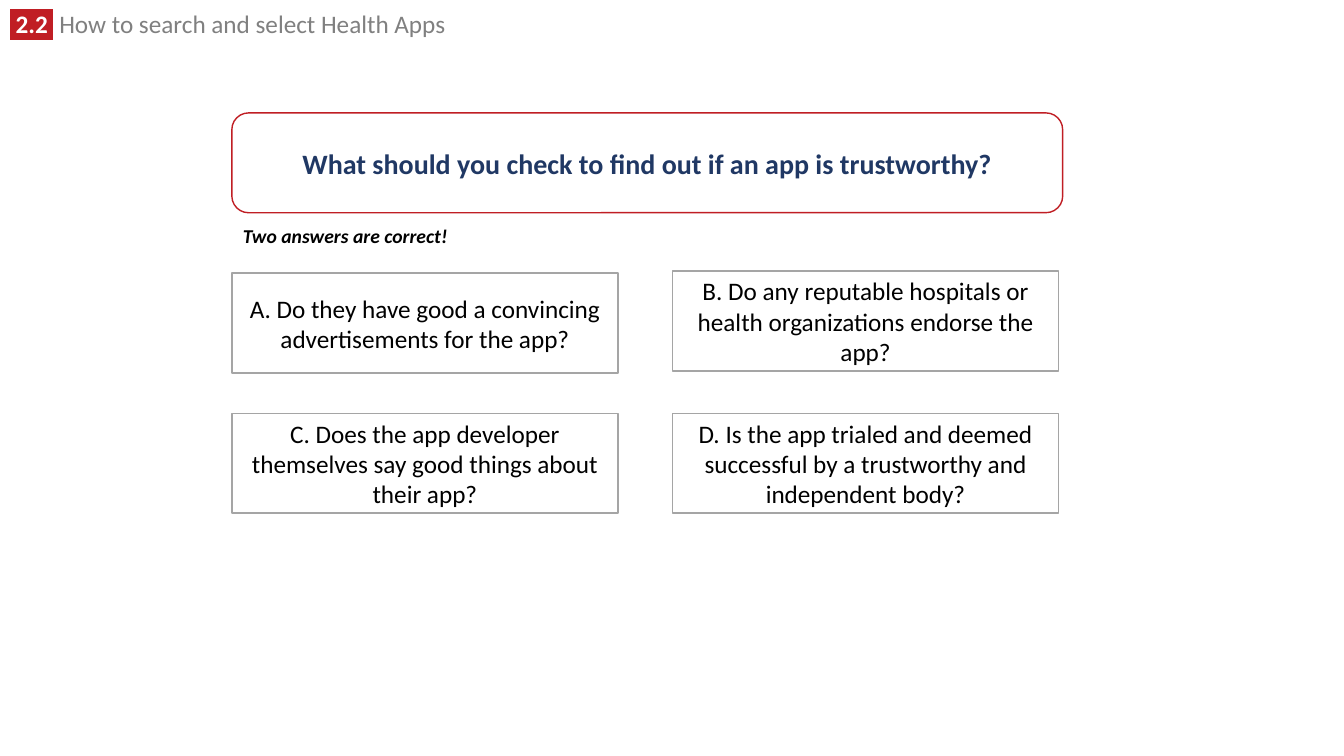
from dataclasses import dataclass

from lxml.etree import SubElement
from pptx import Presentation
from pptx.dml.color import RGBColor
from pptx.enum.shapes import MSO_SHAPE as Shape
from pptx.enum.text import MSO_ANCHOR as Anchor, MSO_AUTO_SIZE as AutoSize, PP_ALIGN as Align
from pptx.oxml.ns import qn
from pptx.util import Emu, Pt

PX = 9144  # 100 px to the inch


@dataclass(frozen=True)
class Theme:
    font: str = "Calibri"
    red: str = "C01E24"
    navy: str = "203864"
    gray: str = "808080"
    border: str = "A5A5A5"
    white: str = "FFFFFF"
    black: str = "000000"
    question_size: int = 20
    body_size: int = 18
    hint_size: int = 14


THEME = Theme()
ANSWER_LEFT = (230, 667)
ANSWER_WIDTH, BOX_HEIGHT = 383, 99
ANSWERS = (
    (0, 271, "A. Do they have good a convincing advertisements for the app?"),
    (1, 269, "B. Do any reputable hospitals or health organizations endorse the app?"),
    (0, 410, "C. Does the app developer themselves say good things about their app?"),
    (1, 410, "D. Is the app trialed and deemed successful by a trustworthy and independent body?"),
)


def color(value):
    return RGBColor.from_string(value)


def px(*lengths):
    return [Emu(length * PX) for length in lengths]


def set_font(para, size, ink, bold=False, italic=False):
    font = para.font
    font.name, font.size = THEME.font, Pt(size)
    font.bold, font.italic = bold, italic
    font.color.rgb = color(ink)


def add_label(page, area, wrap=True):
    """Add a text box that grows with its text and return its frame."""
    frame = page.shapes.add_textbox(*px(*area)).text_frame
    frame.word_wrap = wrap
    frame.auto_size = AutoSize.SHAPE_TO_FIT_TEXT
    return frame


def add_span(para, text, ink, bold, highlight=None):
    span = para.add_run()
    span.text = text
    span.font.bold = bold
    span.font.color.rgb = color(ink)
    if highlight:
        marker = SubElement(span.font._element, qn("a:highlight"))
        SubElement(marker, qn("a:srgbClr"), val=highlight)


def add_heading(page, number, title):
    para = add_label(page, (0, 9, 952, 35)).paragraphs[0]
    para.line_spacing = 0.8
    para.font.name, para.font.size = THEME.font, Pt(THEME.body_size)
    add_span(para, f" {number} ", THEME.white, True, THEME.red)
    add_span(para, f" {title}", THEME.gray, False)


def add_card(page, kind, area, text, line, size, ink, bold=False):
    box = page.shapes.add_shape(kind, *px(*area))
    box.shadow.inherit = False
    box.fill.solid()
    box.fill.fore_color.rgb = color(THEME.white)
    box.line.color.rgb = color(line)
    box.line.width = Pt(1)
    frame = box.text_frame
    frame.word_wrap = True
    frame.vertical_anchor = Anchor.MIDDLE
    para = frame.paragraphs[0]
    para.text = text
    para.alignment = Align.CENTER
    set_font(para, size, ink, bold)


def add_hint(page, text):
    para = add_label(page, (231, 217, 224, 34), wrap=False).paragraphs[0]
    para.text = text
    set_font(para, THEME.hint_size, THEME.black, bold=True, italic=True)


def main():
    deck = Presentation()
    deck.slide_width, deck.slide_height = px(1333, 750)
    page = deck.slides.add_slide(deck.slide_layouts[6])
    add_heading(page, "2.2", "How to search and select Health Apps")
    add_card(page, Shape.ROUNDED_RECTANGLE, (230, 112, 824, BOX_HEIGHT),
             "What should you check to find out if an app is trustworthy?",
             THEME.red, THEME.question_size, THEME.navy, bold=True)
    add_hint(page, "Two answers are correct!")
    for column, top, text in ANSWERS:
        area = (ANSWER_LEFT[column], top, ANSWER_WIDTH, BOX_HEIGHT)
        add_card(page, Shape.RECTANGLE, area, text,
                 THEME.border, THEME.body_size, THEME.black)
    deck.save("out.pptx")


if __name__ == "__main__":
    main()
